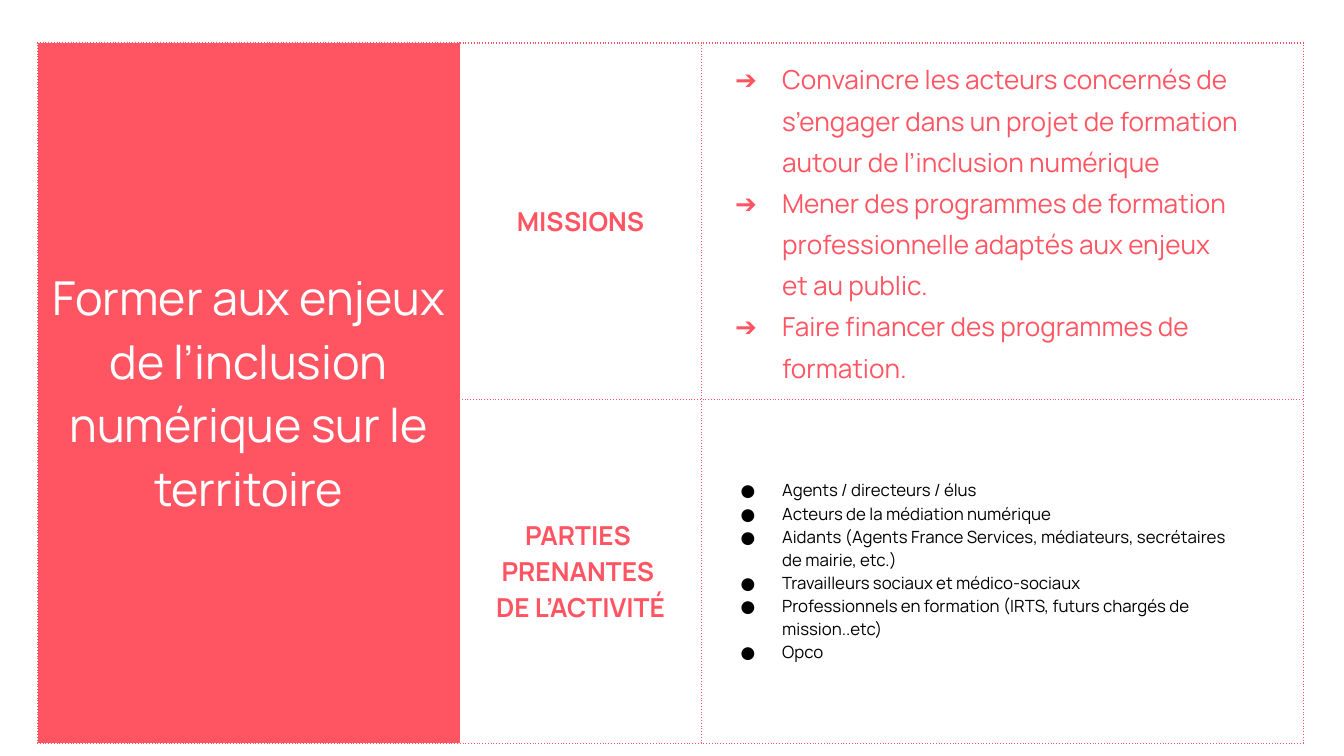
from pptx import Presentation
from pptx.dml.color import RGBColor
from pptx.enum.text import MSO_ANCHOR, PP_ALIGN
from pptx.oxml import parse_xml
from pptx.oxml.ns import nsdecls
from pptx.util import Inches, Pt

COLORS = {"coral": "FF5563", "white": "FFFFFF", "black": "000000"}
FONT = "Manrope"


def outline(cell):
    """Give all four sides of the cell a dotted line."""
    props = cell._tc.get_or_add_tcPr()
    for side in "LRTB":
        props.append(parse_xml(
            f'<a:ln{side} {nsdecls("a")} w="9525"><a:solidFill>'
            f'<a:srgbClr val="{COLORS["coral"]}"/></a:solidFill>'
            f'<a:prstDash val="dot"/></a:ln{side}>'))


def write(cell, lines, size, color, bold=False, bullet=None, hang=0, spacing=None):
    """Fill the cell with one paragraph per line, bulleted or else centred."""
    cell.vertical_anchor = MSO_ANCHOR.MIDDLE
    frame = cell.text_frame
    for i, line in enumerate(lines):
        para = frame.add_paragraph() if i else frame.paragraphs[0]
        para.text = line
        if bullet:
            props = para._p.get_or_add_pPr()
            props.set("marL", str(Inches(0.5)))
            props.set("indent", str(-Inches(hang)))
            for xml in (f'<a:buClr {nsdecls("a")}><a:srgbClr val="{COLORS[color]}"/></a:buClr>',
                        f'<a:buSzPts {nsdecls("a")} val="{size * 100}"/>',
                        f'<a:buFont {nsdecls("a")} typeface="{FONT}"/>',
                        f'<a:buChar {nsdecls("a")} char="{bullet}"/>'):
                props.append(parse_xml(xml))
        else:
            para.alignment = PP_ALIGN.CENTER
        if spacing:
            para.line_spacing = spacing
        para.font.name = FONT
        para.font.size = Pt(size)
        para.font.bold = bold
        para.font.color.rgb = RGBColor.from_string(COLORS[color])


deck = Presentation()
deck.slide_width = Inches(10)
deck.slide_height = deck.slide_width * 9 // 16
slide = deck.slides.add_slide(deck.slide_layouts[6])

widths = [3.14, 1.8, 4.48]
height = 2.56
table = slide.shapes.add_table(
    2, 3, Inches(0.28), Inches(0.32), Inches(sum(widths)), Inches(2 * height)).table
table.first_row = table.horz_banding = False
for column, width in zip(table.columns, widths):
    column.width = Inches(width)
for row in table.rows:
    row.height = Inches(height)

for cell in table.iter_cells():
    outline(cell)
    cell.fill.background()
    cell.margin_left = cell.margin_right = Inches(0.1)
    cell.margin_top = cell.margin_bottom = Inches(0.1)

theme = table.cell(0, 0)
theme.merge(table.cell(1, 0))
theme.fill.solid()
theme.fill.fore_color.rgb = RGBColor.from_string(COLORS["coral"])
write(theme, ["Former aux enjeux de l’inclusion numérique sur le territoire"], 25, "white")

write(table.cell(0, 1), ["MISSIONS"], 14, "coral", bold=True)
write(table.cell(0, 2), [
    "Convaincre les acteurs concernés de s’engager dans un projet de formation "
    "autour de l’inclusion numérique",
    "Mener des programmes de formation professionnelle adaptés aux enjeux \vet au public.",
    "Faire financer des programmes de formation.",
], 14, "coral", bullet="➔", hang=0.35, spacing=1.15)

write(table.cell(1, 1), ["PARTIES ", "PRENANTES ", "DE L’ACTIVITÉ"], 14, "coral", bold=True)
write(table.cell(1, 2), [
    "Agents / directeurs / élus",
    "Acteurs de la médiation numérique",
    "Aidants (Agents France Services, médiateurs, secrétaires \vde mairie, etc.)",
    "Travailleurs sociaux et médico-sociaux",
    "Professionnels en formation (IRTS, futurs chargés de mission..etc)",
    "Opco",
], 9, "black", bullet="●", hang=0.31)

deck.save("out.pptx")
